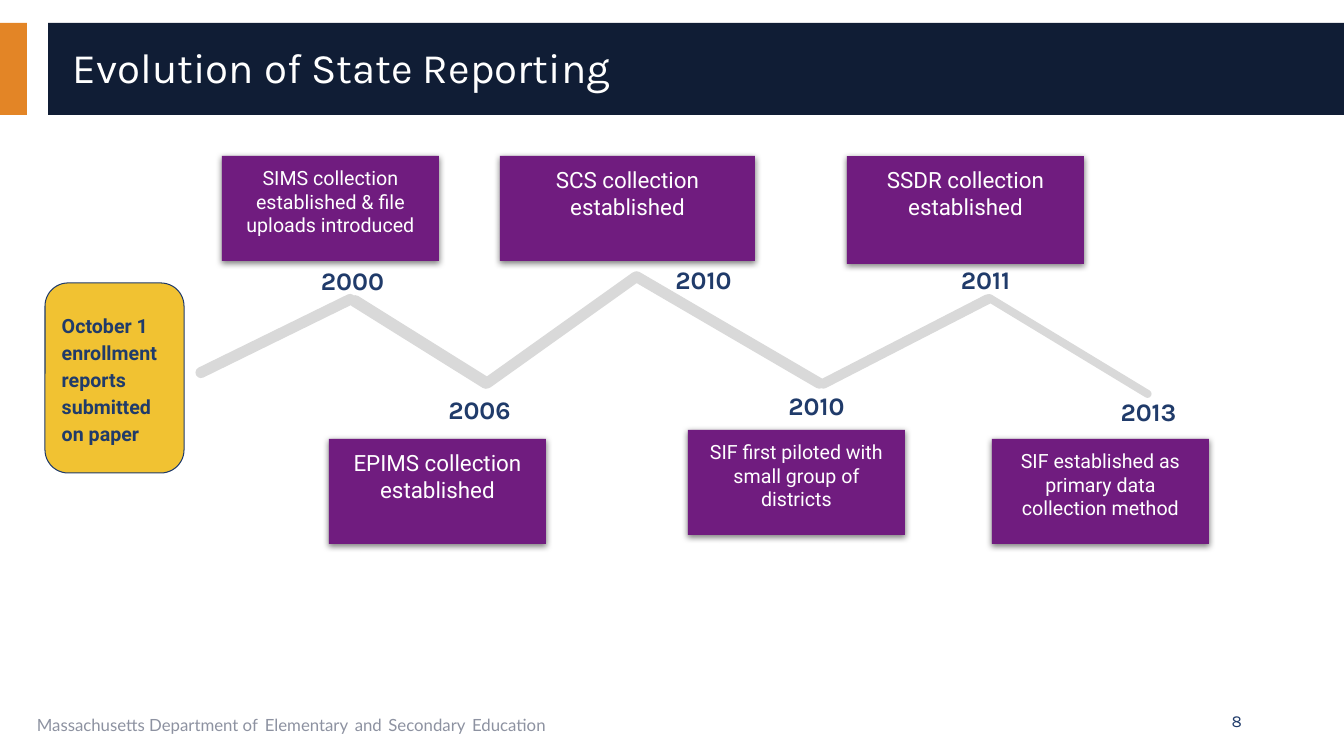
import math

from lxml import etree
from pptx import Presentation
from pptx import util as u
from pptx.dml.color import RGBColor
from pptx.enum import shapes, text
from pptx.oxml import ns

SCALE = 914400 / 100.8
NAVY, BLUE, ORANGE, YELLOW = "101D35", "203B6A", "E38526", "F1C232"
PURPLE, SILVER, GRAY, WHITE = "701C7F", "D9D9D9", "8D92A1", "FFFFFF"
KIND = shapes.MSO_SHAPE
ALIGN = text.PP_ALIGN
ANCHOR = text.MSO_ANCHOR

MILESTONES = [
    ("SIMS collection established & file uploads introduced", 14, (222, 156, 217, 105)),
    ("SCS collection established", 16, (500, 156, 255, 105)),
    ("SSDR collection established", 16, (847, 156, 237, 108)),
    ("EPIMS collection established", 16, (329, 439, 217, 105)),
    ("SIF first piloted with small group of districts", 14, (688, 430, 217, 105)),
    ("SIF established as primary data collection method", 14, (992, 439, 217, 105)),
]
YEARS = [
    ("2000", 298, 260), ("2006", 425, 389), ("2010", 649, 259),
    ("2010", 762, 385), ("2011", 931, 259), ("2013", 1094, 391),
]
TIMELINE = [
    ((483, 386), (640, 274), 11),
    ((196, 375), (355, 297), 11),
    ((819, 386), (992, 297), 10),
    ((986, 296), (1151, 396), 8),
    ((632, 274), (824, 386), 11),
    ((350, 298), (491, 386), 12),
]


def px(value):
    return u.Emu(round(value * SCALE))


def color(value):
    return RGBColor.from_string(value)


def add_block(page, kind, area, fill, line=None):
    block = page.shapes.add_shape(kind, *map(px, area))
    block.shadow.inherit = False
    block.fill.solid()
    block.fill.fore_color.rgb = color(fill)
    if line:
        block.line.color.rgb = color(line)
        block.line.width = u.Pt(0.75)
    else:
        block.line.fill.background()
    return block


def write(box, spans, align=ALIGN.LEFT, anchor=ANCHOR.TOP, spacing=1.0, inset=None):
    frame = box.text_frame
    frame.word_wrap = True
    frame.vertical_anchor = anchor
    if inset is not None:
        frame.margin_left = frame.margin_right = px(inset)
        frame.margin_top = frame.margin_bottom = px(inset)
    para = frame.paragraphs[0]
    para.alignment = align
    para.line_spacing = spacing
    for words, font, size, tint, bold in spans:
        span = para.add_run()
        span.text = words
        span.font.name = font
        span.font.size = u.Pt(size)
        span.font.color.rgb = color(tint)
        span.font.bold = bold


def add_label(page, area, spans, **layout):
    box = page.shapes.add_textbox(*map(px, area))
    write(box, spans, **layout)


def add_drop_shadow(block):
    effects = block._element.spPr.find(ns.qn("a:effectLst"))
    shadow = etree.SubElement(effects, ns.qn("a:outerShdw"), blurRad="57150",
                              dist="19050", dir="5400000", algn="bl", rotWithShape="0")
    tint = etree.SubElement(shadow, ns.qn("a:srgbClr"), val="000000")
    etree.SubElement(tint, ns.qn("a:alpha"), val="50000")


def add_milestone(page, words, size, area):
    block = add_block(page, KIND.RECTANGLE, area, PURPLE)
    add_drop_shadow(block)
    write(block, [(words, "Roboto", size, WHITE, False)], align=ALIGN.CENTER, inset=10)


def add_segment(page, start, end, thickness):
    across, down = end[0] - start[0], end[1] - start[1]
    length = math.hypot(across, down)
    left = (start[0] + end[0] - length) / 2
    top = (start[1] + end[1] - thickness) / 2
    bar = add_block(page, KIND.ROUNDED_RECTANGLE, (left, top, length, thickness), SILVER)
    bar.adjustments[0] = 0.5
    bar.rotation = math.degrees(math.atan2(down, across)) % 360


def add_footer(page):
    spans = []
    for words in ("Massachusetts Department of", "Elementary", "and", "Secondary", "Education"):
        if spans:
            spans.append((" ", "Lato", 18, BLUE, False))
        spans.append((words, "Lato", 12, GRAY, False))
    add_label(page, (27, 701, 851, 40), spans)
    add_label(page, (950, 701, 302, 40), [("8", "Karla", 12, BLUE, False)],
              align=ALIGN.RIGHT, anchor=ANCHOR.MIDDLE)


def main():
    deck = Presentation()
    deck.slide_width, deck.slide_height = px(1344), px(756)
    page = deck.slides.add_slide(deck.slide_layouts[6])

    add_block(page, KIND.RECTANGLE, (0, 23, 27, 92), ORANGE)
    add_block(page, KIND.RECTANGLE, (48, 23, 1296, 92), NAVY)
    add_label(page, (63, 32, 1254, 75),
              [("Evolution of State Reporting", "Karla", 30, WHITE, False)],
              anchor=ANCHOR.MIDDLE, spacing=0.9)
    add_footer(page)

    paper = add_block(page, KIND.FLOWCHART_ALTERNATE_PROCESS, (45, 283, 139, 190), YELLOW, BLUE)
    write(paper, [("October 1 enrollment reports submitted on paper", "Roboto", 14, BLUE, True)],
          anchor=ANCHOR.MIDDLE, spacing=1.15, inset=10)

    for words, size, area in MILESTONES:
        add_milestone(page, words, size, area)
    for start, end, thickness in TIMELINE:
        add_segment(page, start, end, thickness)
    for year, left, top in YEARS:
        add_label(page, (left, top, 109, 40), [(year, "Karla", 18, BLUE, True)],
                  align=ALIGN.CENTER)

    deck.save("out.pptx")


if __name__ == "__main__":
    main()
